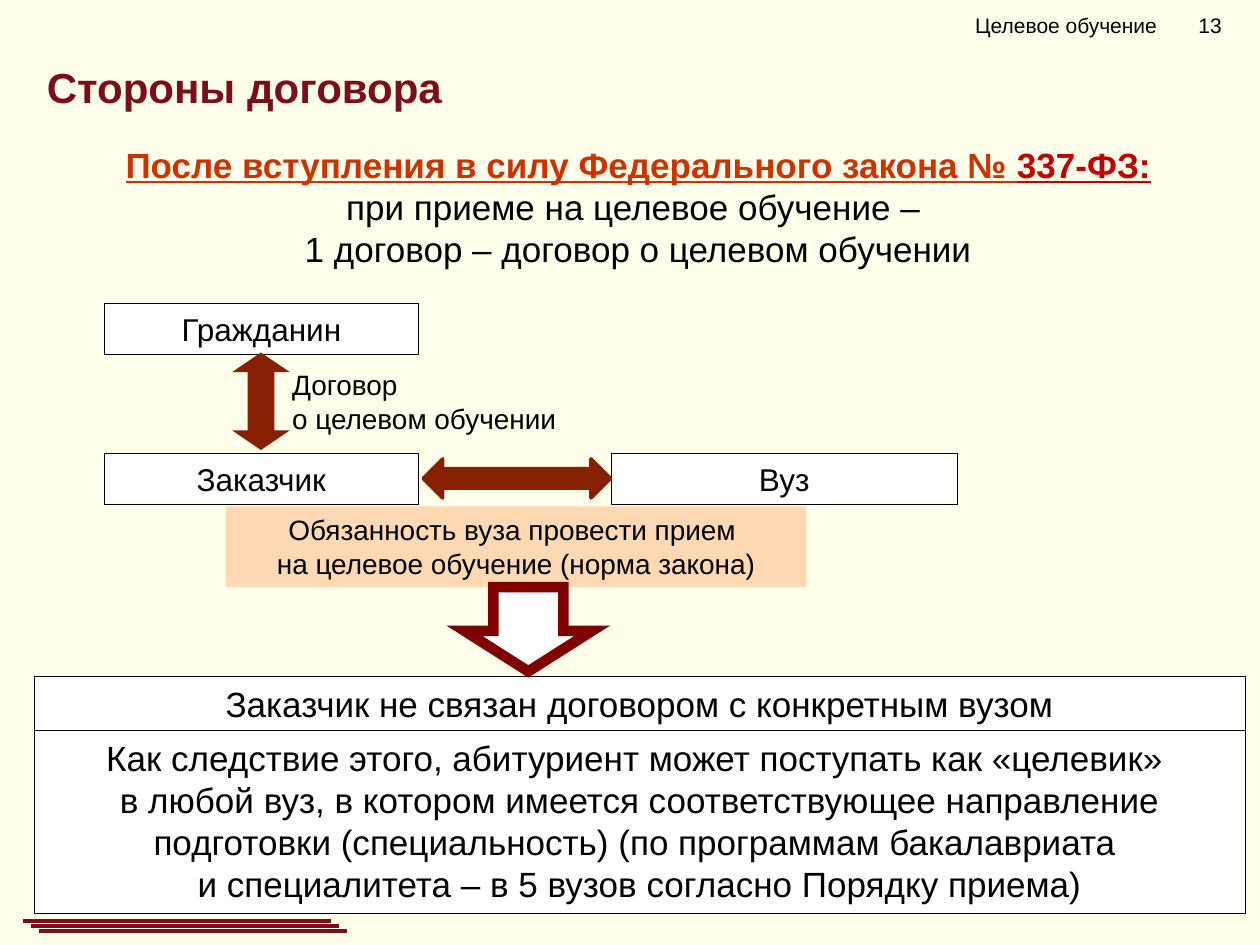
import pptx
import pptx.dml.color
import pptx.enum.shapes
import pptx.enum.text
import pptx.oxml
import pptx.oxml.ns
import pptx.util
from pptx.util import Cm

RGBColor = pptx.dml.color.RGBColor
SHAPES = pptx.enum.shapes.MSO_SHAPE
ALIGN = pptx.enum.text.PP_ALIGN
ANCHOR = pptx.enum.text.MSO_ANCHOR
AUTO_SIZE = pptx.enum.text.MSO_AUTO_SIZE

CREAM = RGBColor(0xFF, 0xFF, 0xEB)
WHITE = RGBColor(0xFF, 0xFF, 0xFF)
BLACK = RGBColor(0x00, 0x00, 0x00)
PEACH = RGBColor(0xFF, 0xD9, 0xB3)
BROWN = RGBColor(0x87, 0x1F, 0x03)
MAROON = RGBColor(0x80, 0x00, 0x00)
WINE = RGBColor(0x7B, 0x0F, 0x19)
ORANGE_RED = RGBColor(0xCC, 0x33, 0x00)
RED = RGBColor(0xC0, 0x00, 0x00)


def write(shape, text, size=20, color=BLACK, bold=False, underline=False,
          align=ALIGN.CENTER, anchor=ANCHOR.TOP, fit=AUTO_SIZE.SHAPE_TO_FIT_TEXT,
          same_line=False):
    """Add text to a shape, one paragraph for each line."""
    frame = shape.text_frame
    frame.word_wrap = True
    frame.auto_size = fit
    frame.vertical_anchor = anchor
    for line in text.split("\n"):
        if frame.text and not same_line:
            paragraph = frame.add_paragraph()
        else:
            paragraph = frame.paragraphs[-1]
        paragraph.alignment = align
        run = paragraph.add_run()
        run.text = line
        run.font.name = "Arial"
        run.font.size = pptx.util.Pt(size)
        run.font.color.rgb = color
        run.font.bold = bold
        run.font.underline = underline


def add_block(kind, place, fill, line=None, width=0.25):
    """Add a preset shape with a plain fill and an optional outline."""
    shape = slide.shapes.add_shape(kind, *[Cm(length) for length in place])
    shape.shadow.inherit = False
    shape.fill.solid()
    shape.fill.fore_color.rgb = fill
    if line is None:
        shape.line.fill.background()
    else:
        shape.line.color.rgb = line
        shape.line.width = pptx.util.Pt(width)
    return shape


presentation = pptx.Presentation()
presentation.slide_width = Cm(25.4)
presentation.slide_height = Cm(19.05)
slide = presentation.slides.add_slide(presentation.slide_layouts[5])
slide.background.fill.solid()
slide.background.fill.fore_color.rgb = CREAM

# Title
title = slide.shapes.title
title.left, title.top, title.width, title.height = Cm(0.69), Cm(1.12), Cm(23.6), Cm(1.19)
write(title, "Стороны договора", size=24, color=WINE, bold=True,
      align=ALIGN.LEFT, fit=AUTO_SIZE.NONE)

# Running header with the page number at a tab stop
header = slide.shapes.add_textbox(Cm(18.9), Cm(0), Cm(6.5), Cm(1.02))
header.text_frame.margin_left = Cm(0.76)
write(header, "Целевое обучение\t13", size=12, align=ALIGN.LEFT,
      anchor=ANCHOR.MIDDLE, fit=AUTO_SIZE.NONE)
tab_list = pptx.oxml.parse_xml(
    f'<a:tabLst {pptx.oxml.ns.nsdecls("a")}><a:tab pos="{Cm(4.5)}" algn="l"/></a:tabLst>')
header.text_frame.paragraphs[0]._p.get_or_add_pPr().append(tab_list)

# Introduction
introduction = slide.shapes.add_textbox(Cm(0.61), Cm(2.77), Cm(24.51), Cm(2.82))
write(introduction, "После вступления в силу Федерального закона № ",
      color=ORANGE_RED, bold=True, underline=True)
write(introduction, "337-ФЗ:", color=RED, bold=True, underline=True, same_line=True)
write(introduction, "при приеме на целевое обучение – \n1 договор – договор о целевом обучении")

# Label of the contract
contract = slide.shapes.add_textbox(Cm(5.64), Cm(7.29), Cm(6.83), Cm(1.63))
write(contract, "Договор\nо целевом обучении", size=16, align=ALIGN.LEFT)

# Parties, duty and conclusions
boxes = [
    ("Гражданин", 18, (2.11, 6.12, 6.32, 1.02), WHITE, BLACK),
    ("Заказчик", 18, (2.11, 9.14, 6.32, 1.02), WHITE, BLACK),
    ("Вуз", 18, (12.32, 9.14, 6.98, 1.02), WHITE, BLACK),
    ("Обязанность вуза провести прием \nна целевое обучение (норма закона)",
     16, (4.55, 10.21, 11.71, 1.63), PEACH, None),
    ("Заказчик не связан договором с конкретным вузом",
     20, (0.69, 13.64, 24.41, 1.11), WHITE, BLACK),
    ("Как следствие этого, абитуриент может поступать как «целевик» \n"
     "в любой вуз, в котором имеется соответствующее направление подготовки "
     "(специальность) (по программам бакалавриата \n"
     "и специалитета – в 5 вузов согласно Порядку приема)",
     20, (0.69, 14.73, 24.41, 3.68), WHITE, BLACK),
]
for text, size, place, fill, line in boxes:
    write(add_block(SHAPES.RECTANGLE, place, fill, line), text, size=size)

# Block arrows
add_block(SHAPES.LEFT_RIGHT_ARROW, (8.53, 9.25, 3.78, 0.79), BROWN, BROWN, 2)
turned_arrows = [
    (SHAPES.LEFT_RIGHT_ARROW, (4.32, 7.62, 1.88, 0.94), BROWN, BROWN, 2, (0.5, 0.34)),
    (SHAPES.RIGHT_ARROW, (9.8, 11.4, 1.7, 2.57), WHITE, MAROON, 6, (0.55, 0.48)),
]
for kind, place, fill, line, width, adjustments in turned_arrows:
    arrow = add_block(kind, place, fill, line, width)
    arrow.rotation = 90
    for index, value in enumerate(adjustments):
        arrow.adjustments[index] = value
    arrow.line._get_or_add_ln().append(pptx.oxml.parse_xml(
        f'<a:miter {pptx.oxml.ns.nsdecls("a")} lim="800000"/>'))

# Stepped footer lines
footer = slide.shapes.add_group_shape()
for step in range(3):
    left, top = 0.46 + 0.16 * step, 18.57 + 0.1 * step
    rule = footer.shapes.add_connector(pptx.enum.shapes.MSO_CONNECTOR.STRAIGHT,
                                       Cm(left), Cm(top), Cm(left + 6.21), Cm(top))
    rule.line.color.rgb = WINE
    rule.line.width = pptx.util.Pt(2.25)
    rule._element.spPr.append(pptx.oxml.parse_xml(
        f'<a:effectLst {pptx.oxml.ns.nsdecls("a")}/>'))

presentation.save("out.pptx")
